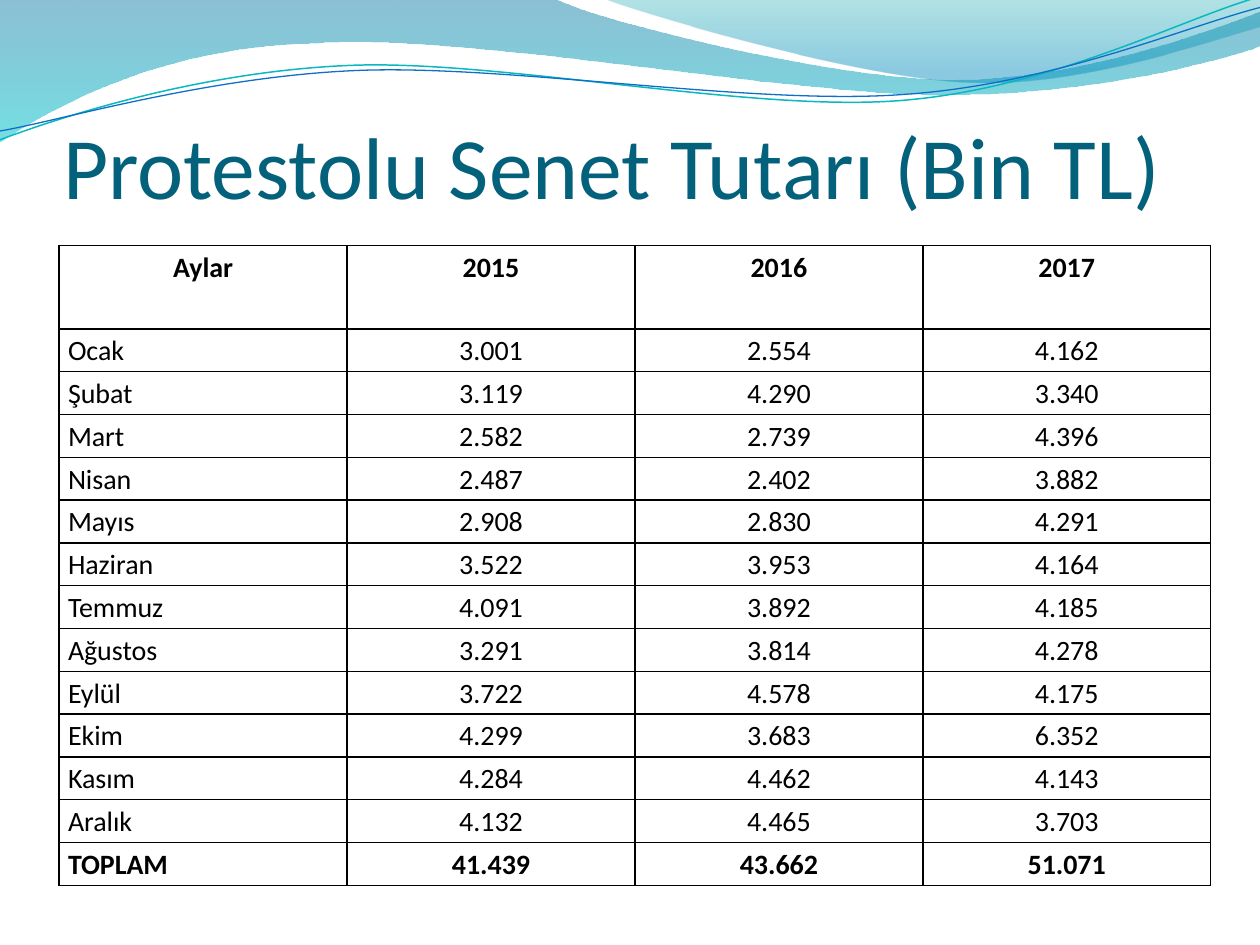
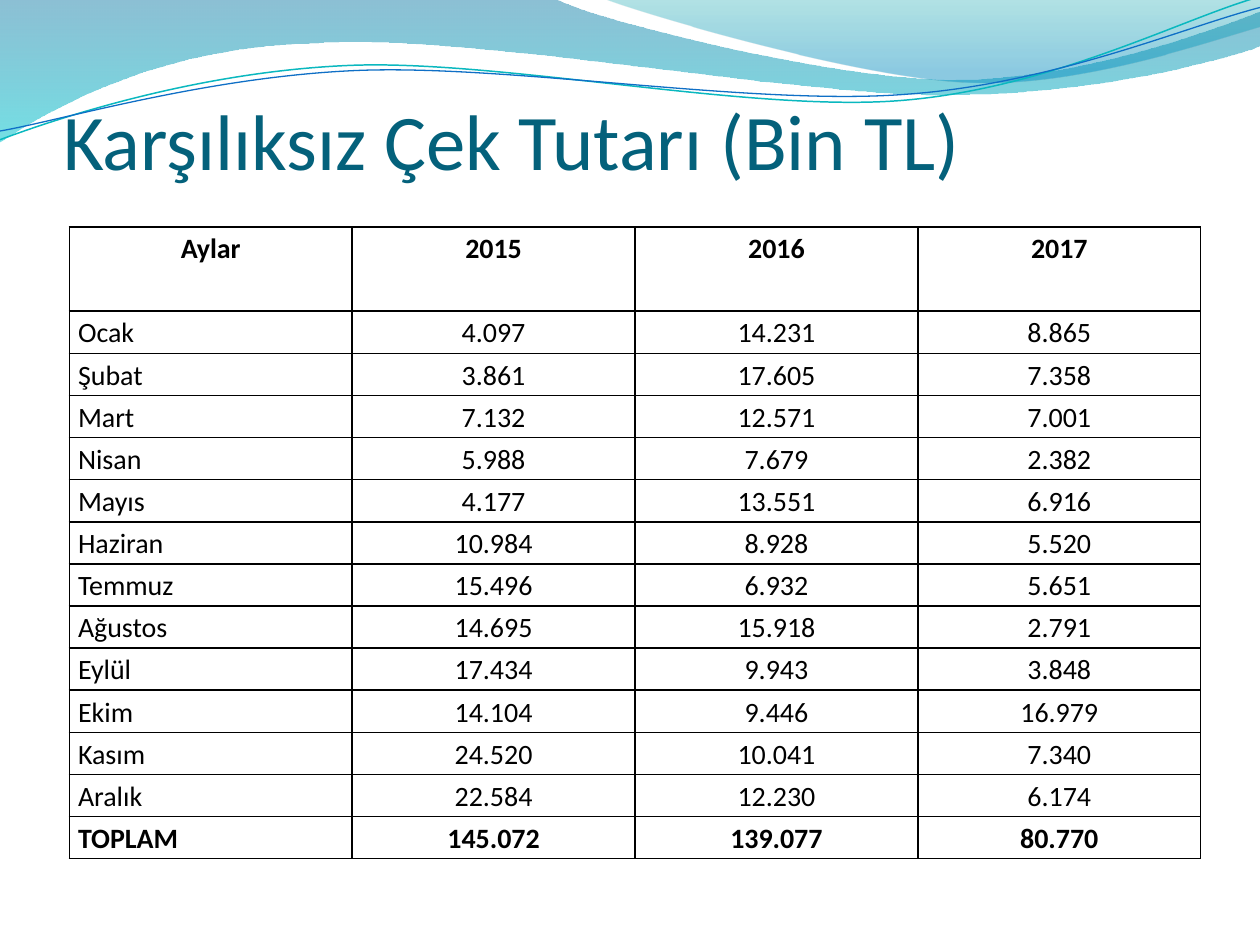
import math
from dataclasses import dataclass

from lxml import etree
from pptx import Presentation, util as u
from pptx.dml.color import RGBColor
from pptx.enum import text
from pptx.oxml.ns import qn

Inches = u.Inches


@dataclass(frozen=True)
class Theme:
    font: str = "Calibri"
    title: str = "04617B"
    ink: str = "000000"
    body_size: float = 16
    border: float = 1
    line_spacing: float = 1.15
    teal_line: str = "0AB8BF"
    blue_line: str = "0F6FC6"
    left_grad: tuple = ((0, "0074A1", 45), (1, "00C6CF", 55))
    right_grad: tuple = ((0, "00A1A9", 30), (0.8, "008BBF", 45))


T = Theme()

CURVE_TILT = -2.7
LEFT_WAVE = [
    (0, 0), (4.4, -0.01),
    (4.76, 0.17, 6.64, 0.63, 7.58, 0.63), (8.53, 0.63, 9.58, 0.26, 10, 0.09),
    (10.01, 0.36),
    (9.83, 0.44, 8.7, 0.76, 7.46, 0.75), (6.22, 0.75, 3.82, 0.28, 2.57, 0.34),
    (1.29, 0.36, 0.46, 0.83, -0.01, 1.13), (0, 0),
]
RIGHT_WAVE = [
    (4.79, -0.01),
    (5.09, 0.11, 6.82, 0.62, 7.69, 0.65), (8.56, 0.69, 9.61, 0.32, 10, 0.21),
    (10, 0), (4.79, -0.01),
]
TEAL_CURVE = [
    (0, 1.11),
    (0.48, 0.93, 1.58, 0.57, 2.77, 0.52), (3.95, 0.47, 5.93, 0.89, 7.13, 0.8),
    (8.33, 0.71, 9.38, 0.15, 9.98, -0.02),
]
BLUE_CURVE = [
    (0, 1.04),
    (0.47, 0.96, 1.64, 0.61, 2.83, 0.56), (4.03, 0.51, 5.97, 0.84, 7.17, 0.75),
    (8.36, 0.67, 9.41, 0.21, 10, 0.06),
]

YEARS = ["2015", "2016", "2017"]
ROW_LABELS = ("Ocak Şubat Mart Nisan Mayıs Haziran Temmuz Ağustos "
              "Eylül Ekim Kasım Aralık TOPLAM").split()
PROTESTED_BILLS = [
    "3.001 3.119 2.582 2.487 2.908 3.522 4.091 3.291 3.722 4.299 4.284 4.132 41.439",
    "2.554 4.290 2.739 2.402 2.830 3.953 3.892 3.814 4.578 3.683 4.462 4.465 43.662",
    "4.162 3.340 4.396 3.882 4.291 4.164 4.185 4.278 4.175 6.352 4.143 3.703 51.071",
]
BAD_CHEQUES = [
    "4.097 3.861 7.132 5.988 4.177 10.984 15.496 14.695 17.434 14.104 24.520 22.584 145.072",
    "14.231 17.605 12.571 7.679 13.551 8.928 6.932 15.918 9.943 9.446 10.041 12.230 139.077",
    "8.865 7.358 7.001 2.382 6.916 5.520 5.651 2.791 3.848 16.979 7.340 6.174 80.770",
]


def rgb(color):
    return RGBColor.from_string(color)


def seg_points(seg):
    return list(zip(seg[::2], seg[1::2]))


def turn(segs, degrees, cx, cy):
    cos, sin = math.cos(math.radians(degrees)), math.sin(math.radians(degrees))
    return [[v for x, y in seg_points(seg)
             for v in (cx + (x - cx) * cos - (y - cy) * sin,
                       cy + (x - cx) * sin + (y - cy) * cos)]
            for seg in segs]


def add_outline(s, segs, close):
    points = [(Inches(x), Inches(y)) for seg in segs for x, y in seg_points(seg)]
    fb = s.shapes.build_freeform(*points[0])
    fb.add_line_segments(points[1:], close=close)
    sp = fb.convert_to_shape()
    sp.shadow.inherit = False
    lines = iter(list(sp.element.iter(qn("a:lnTo"))))
    for seg in segs[1:]:
        parts = [next(lines) for _ in seg_points(seg)]
        if len(parts) == 3:
            bezier = etree.Element(qn("a:cubicBezTo"))
            parts[0].addprevious(bezier)
            for part in parts:
                bezier.append(part[0])
                part.getparent().remove(part)
    return sp


def add_wave(s, segs, grad):
    sp = add_outline(s, segs, True)
    sp.line.fill.background()
    sp.fill.gradient()
    sp.fill.gradient_angle = 270
    for stop, (pos, color, _) in zip(sp.fill.gradient_stops, grad):
        stop.position = pos
        stop.color.rgb = rgb(color)
    for clr, (_, _, opacity) in zip(sp.element.spPr.iter(qn("a:srgbClr")), grad):
        etree.SubElement(clr, qn("a:alpha"), val=str(opacity * 1000))


def add_curve(s, segs, color, width, cy):
    sp = add_outline(s, turn(segs, -CURVE_TILT, 5, cy), False)
    sp.rotation = CURVE_TILT
    sp.fill.background()
    sp.line.color.rgb = rgb(color)
    sp.line.width = u.Pt(width)


def add_waves(s):
    add_wave(s, LEFT_WAVE, T.left_grad)
    add_wave(s, RIGHT_WAVE, T.right_grad)
    add_curve(s, TEAL_CURVE, T.teal_line, 0.85, 0.57)
    add_curve(s, BLUE_CURVE, T.blue_line, 0.75, 0.59)


def write(tf, words, size, color=T.ink, bold=False, align=text.PP_ALIGN.LEFT, spacing=None):
    p = tf.paragraphs[0]
    p.alignment = align
    p.line_spacing = spacing
    r = p.add_run()
    r.text = words
    r.font.name = T.font
    r.font.size = u.Pt(size)
    r.font.bold = bold
    r.font.color.rgb = rgb(color)


def add_title(s, words, size, height):
    tf = s.shapes.add_textbox(Inches(0.5), Inches(0.77), Inches(9.08), Inches(height)).text_frame
    tf.word_wrap = True
    tf.vertical_anchor = text.MSO_ANCHOR.BOTTOM
    tf.margin_left = tf.margin_right = tf.margin_bottom = 0
    tf.margin_top = Inches(0.05)
    write(tf, words, size, T.title)


def set_borders(cell):
    tc_pr = cell._tc.get_or_add_tcPr()
    for i, side in enumerate("LRTB"):
        ln = etree.Element(qn(f"a:ln{side}"), w=str(u.Pt(T.border)))
        fill = etree.SubElement(ln, qn("a:solidFill"))
        etree.SubElement(fill, qn("a:srgbClr"), val=T.ink)
        tc_pr.insert(i, ln)


def add_month_table(s, columns, left, top, width, height, header_height):
    rows = [["Aylar", *YEARS], *zip(ROW_LABELS, *(c.split() for c in columns))]
    table = s.shapes.add_table(len(rows), len(rows[0]), Inches(left), Inches(top),
                               Inches(width), Inches(height)).table
    table.first_row = table.horz_banding = False
    for col in table.columns:
        col.width = Inches(width / len(rows[0]))
    row_height = (height - header_height) / len(ROW_LABELS)
    for i, values in enumerate(rows):
        table.rows[i].height = Inches(row_height if i else header_height)
        for j, value in enumerate(values):
            cell = table.cell(i, j)
            cell.margin_left = cell.margin_right = Inches(0.07)
            cell.margin_top = cell.margin_bottom = 0
            cell.fill.background()
            set_borders(cell)
            is_label = i > 0 and j == 0
            write(cell.text_frame, value, T.body_size, bold=i in (0, len(rows) - 1),
                  align=text.PP_ALIGN.LEFT if is_label else text.PP_ALIGN.CENTER,
                  spacing=T.line_spacing)


def add_slide(prs, title, title_size, title_height, columns, **frame):
    s = prs.slides.add_slide(prs.slide_layouts[6])
    add_waves(s)
    add_title(s, title, title_size, title_height)
    add_month_table(s, columns, **frame)


def main():
    prs = Presentation()
    prs.slide_width, prs.slide_height = Inches(10), Inches(7.5)
    add_slide(prs, "Protestolu Senet Tutarı (Bin TL)", 50, 0.95, PROTESTED_BILLS,
              left=0.47, top=1.95, width=9.14, height=5.08, header_height=0.66)
    add_slide(prs, "Karşılıksız Çek Tutarı (Bin TL)", 45, 0.71, BAD_CHEQUES,
              left=0.55, top=1.8, width=8.98, height=5.02, header_height=0.67)
    prs.save("out.pptx")


if __name__ == "__main__":
    main()
